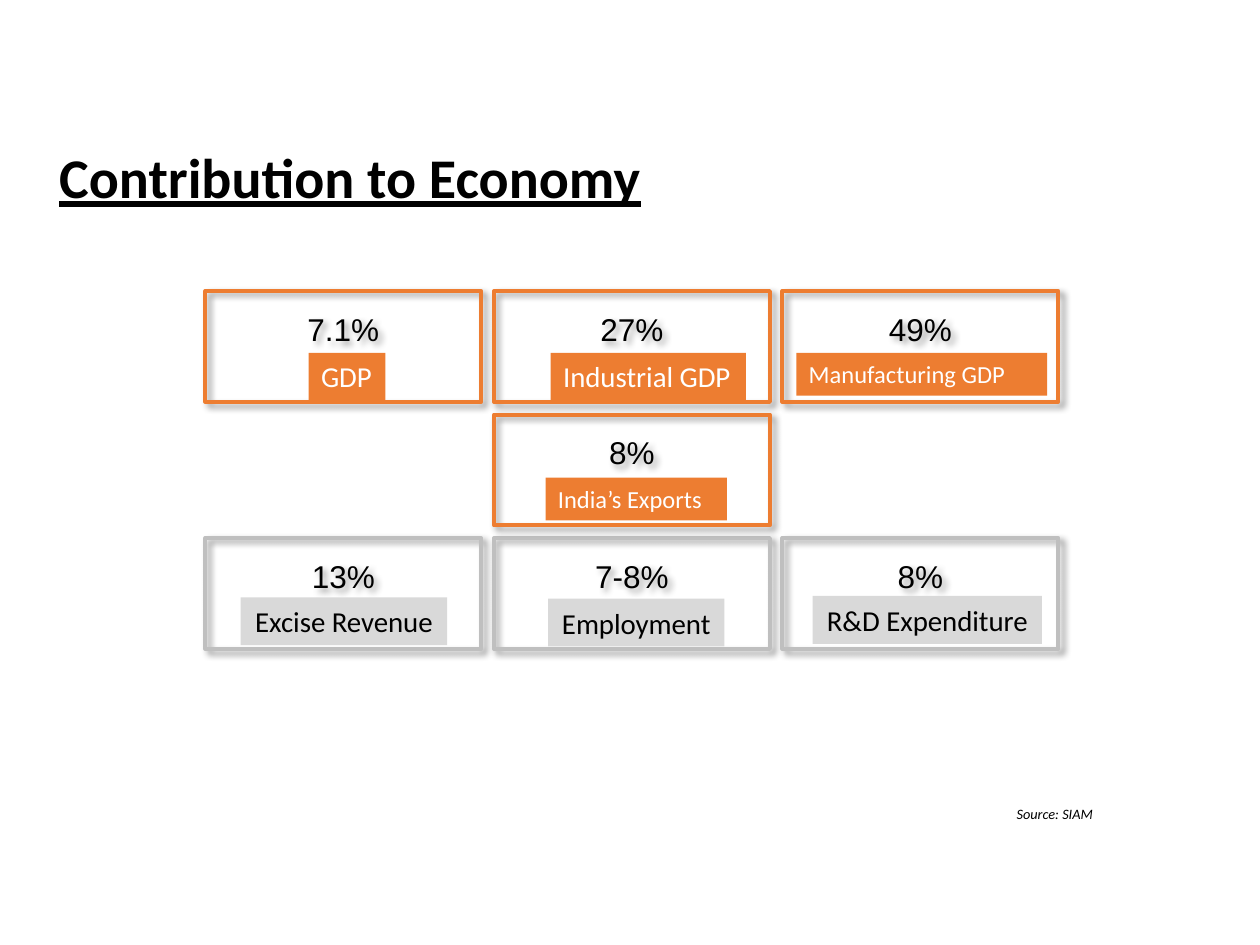
from dataclasses import dataclass
from lxml import etree
from pptx import Presentation
from pptx.dml.color import RGBColor as Rgb
from pptx.enum.shapes import MSO_SHAPE as Shape
from pptx.enum.text import MSO_ANCHOR as Anchor, MSO_AUTO_SIZE as Fit, PP_ALIGN as Align
from pptx.util import Inches, Pt


@dataclass(frozen=True)
class Theme:
    black: str = "000000"
    white: str = "FFFFFF"
    orange: str = "ED7D31"
    edge: str = "BFBFBF"
    gray: str = "D9D9D9"
    head: float = 32
    value: float = 18
    label: float = 16.5
    small: float = 14
    note: float = 8.2
    sans: str = "Calibri"
    figure: str = "Arial"


T = Theme()
TITLE = "Contribution to Economy"
SOURCE = "Source: SIAM"
# line, tag fill, tag text, tag anchor, tag alignment
WARM = (T.orange, T.orange, T.white, Anchor.TOP, Align.LEFT)
COOL = (T.edge, T.gray, T.black, Anchor.MIDDLE, Align.CENTER)
# column, row, value, label, style, label size, tag (dx, dy, width) in the card
CARDS = [
    (0, 0, "7.1%", "GDP", WARM, T.label, (0.82, 0.49, 0.61)),
    (1, 0, "27%", "Industrial GDP", WARM, T.label, (0.45, 0.49, 1.55)),
    (2, 0, "49%", "Manufacturing GDP", WARM, T.small, (0.11, 0.49, 1.99)),
    (0, 2, "13%", "Excise Revenue", COOL, T.label, (0.28, 0.47, 1.64)),
    (1, 2, "7-8%", "Employment", COOL, T.label, (0.43, 0.48, 1.4)),
    (2, 2, "8%", "R&D Expenditure", COOL, T.label, (0.24, 0.46, 1.82)),
    (1, 1, "8%", "India’s Exports", WARM, T.small, (0.41, 0.5, 1.44)),
]
LEFT, TOP, WIDE, HIGH = 1.63, 2.31, 2.19, 0.88
GAP = 0.1
TALL = {T.label: 0.38, T.small: 0.34}
NS = "http://schemas.openxmlformats.org/drawingml/2006/main"
SHADOW = f"""<a:effectLst xmlns:a="{NS}">
<a:outerShdw blurRad="50800" dist="38100" dir="2700000" algn="tl" rotWithShape="0">
<a:srgbClr val="{T.black}"><a:alpha val="40000"/></a:srgbClr>
</a:outerShdw></a:effectLst>"""


def write(shape, text, size, color=T.black, font=T.sans, align=Align.LEFT,
          anchor=Anchor.TOP, wrap=True):
    frame = shape.text_frame
    frame.text = text
    frame.auto_size, frame.word_wrap = Fit.NONE, wrap
    frame.vertical_anchor = anchor
    para = frame.paragraphs[0]
    para.alignment = align
    para.font.size, para.font.name = Pt(size), font
    para.font.color.rgb = Rgb.from_string(color)
    return para.font


def box(slide, *area):
    shape = slide.shapes.add_shape(Shape.RECTANGLE, *map(Inches, area))
    shape.shadow.inherit = False
    return shape


def card(slide, col, row, value, label, style, size, tag):
    edge, fill, ink, anchor, align = style
    x, y = LEFT + col * (WIDE + GAP), TOP + row * (HIGH + GAP)
    frame = box(slide, x, y, WIDE, HIGH)
    frame.fill.background()
    frame.line.color.rgb = Rgb.from_string(edge)
    frame.line.width = Pt(2.25)
    props = frame._element.spPr
    props.remove(props.find(f"{{{NS}}}effectLst"))
    props.append(etree.fromstring(SHADOW))
    write(frame, value, T.value, font=T.figure, align=Align.CENTER, anchor=Anchor.MIDDLE)
    frame.text_frame.margin_bottom = Inches(0.33)  # lifts the value above its tag

    dx, dy, width = tag
    plate = box(slide, x + dx, y + dy, width, TALL[size])
    plate.fill.solid()
    plate.fill.fore_color.rgb = Rgb.from_string(fill)
    plate.line.fill.background()
    write(plate, label, size, ink, align=align, anchor=anchor, wrap=size == T.small)


def main():
    deck = Presentation()
    deck.slide_width, deck.slide_height = Inches(10), Inches(7.5)
    slide = deck.slides.add_slide(deck.slide_layouts[5])
    title = slide.shapes.title
    title.left, title.top, title.width, title.height = map(Inches, (0.47, 1.13, 5.99, 0.54))
    font = write(title, TITLE, T.head)
    font.bold = font.underline = True
    body = title.text_frame
    body.margin_left = body.margin_right = body.margin_top = body.margin_bottom = 0
    for item in CARDS:
        card(slide, *item)
    note = slide.shapes.add_textbox(*map(Inches, (7.97, 6.34, 0.82, 0.24)))
    write(note, SOURCE, T.note, wrap=False).italic = True
    deck.save("out.pptx")


if __name__ == "__main__":
    main()
